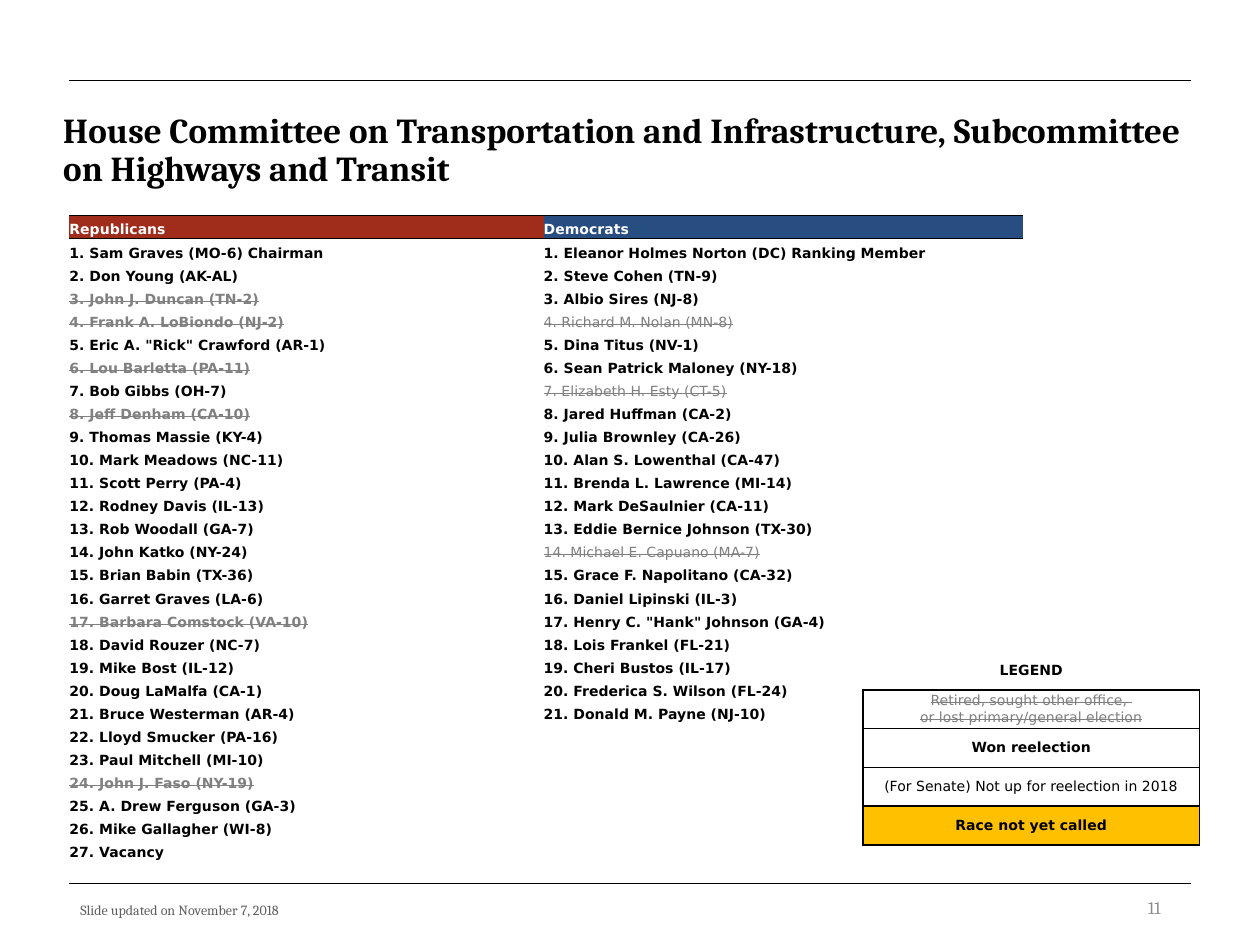
from dataclasses import dataclass
from itertools import zip_longest

from lxml import etree
from pptx import Presentation
from pptx.dml.color import RGBColor
from pptx.enum.shapes import MSO_CONNECTOR
from pptx.enum.text import MSO_ANCHOR, MSO_AUTO_SIZE, PP_ALIGN
from pptx.oxml.ns import qn
from pptx.util import Cm, Pt

LEFT, MID, RIGHT = PP_ALIGN.LEFT, PP_ALIGN.CENTER, PP_ALIGN.RIGHT
CENTRE, BOTTOM = MSO_ANCHOR.MIDDLE, MSO_ANCHOR.BOTTOM
NO_FIT = MSO_AUTO_SIZE.NONE
STRAIGHT = MSO_CONNECTOR.STRAIGHT
PLAIN = "{2D5ABB26-0587-4C30-8999-92F81FD0307C}"  # table style without grid


@dataclass(frozen=True)
class Theme:
    serif: str = "Cambria"
    sans: str = "DejaVu Sans"
    black: str = "000000"
    white: str = "FFFFFF"
    red: str = "A02C1C"
    blue: str = "284D81"
    gold: str = "FFC000"
    gone: str = "808080"
    faded: str = "7F7F7F"
    note: str = "5F5F5F"
    page: str = "8C8C8C"
    head: float = 20
    small: float = 8
    num: float = 10


T = Theme()


@dataclass(frozen=True)
class Look:
    color: str = T.black
    bold: bool = True
    strike: bool = False
    face: str = T.sans
    size: float = T.small
    align: PP_ALIGN = LEFT


@dataclass(frozen=True)
class Key:
    text: str
    look: Look
    fill: str = ""
    sides: str = "LRTB"


@dataclass(frozen=True)
class Party:
    name: str
    fill: str
    gone: Look
    members: list


# A leading "~" marks a member who is leaving
REPS = Party("Republicans", T.red, Look(T.gone, strike=True), [
    "Sam Graves (MO-6) Chairman", "Don Young (AK-AL)",
    "~John J. Duncan (TN-2)", "~Frank A. LoBiondo (NJ-2)",
    'Eric A. "Rick" Crawford (AR-1)', "~Lou Barletta (PA-11)",
    "Bob Gibbs (OH-7)", "~Jeff Denham (CA-10)", "Thomas Massie (KY-4)",
    "Mark Meadows (NC-11)", "Scott Perry (PA-4)", "Rodney Davis (IL-13)",
    "Rob Woodall (GA-7)", "John Katko (NY-24)", "Brian Babin (TX-36)",
    "Garret Graves (LA-6)", "~Barbara Comstock (VA-10)",
    "David Rouzer (NC-7)", "Mike Bost (IL-12)", "Doug LaMalfa (CA-1)",
    "Bruce Westerman (AR-4)", "Lloyd Smucker (PA-16)",
    "Paul Mitchell (MI-10)", "~John J. Faso (NY-19)",
    "A. Drew Ferguson (GA-3)", "Mike Gallagher (WI-8)", "Vacancy"])
DEMS = Party("Democrats", T.blue, Look(T.gone, bold=False, strike=True), [
    "Eleanor Holmes Norton (DC) Ranking Member", "Steve Cohen (TN-9)",
    "Albio Sires (NJ-8)", "~Richard M. Nolan (MN-8)", "Dina Titus (NV-1)",
    "Sean Patrick Maloney (NY-18)", "~Elizabeth H. Esty (CT-5)",
    "Jared Huffman (CA-2)", "Julia Brownley (CA-26)",
    "Alan S. Lowenthal (CA-47)", "Brenda L. Lawrence (MI-14)",
    "Mark DeSaulnier (CA-11)", "Eddie Bernice Johnson (TX-30)",
    "~Michael E. Capuano (MA-7)", "Grace F. Napolitano (CA-32)",
    "Daniel Lipinski (IL-3)", 'Henry C. "Hank" Johnson (GA-4)',
    "Lois Frankel (FL-21)", "Cheri Bustos (IL-17)",
    "Frederica S. Wilson (FL-24)", "Donald M. Payne (NJ-10)"])
KEYS = [
    Key("LEGEND", Look(align=MID), sides="B"),
    Key("Retired, sought other office, \nor lost primary/general election",
        Look(T.faded, bold=False, strike=True, align=MID)),
    Key("Won reelection", Look(align=MID)),
    Key("(For Senate) Not up for reelection in 2018",
        Look(bold=False, align=MID)),
    Key("Race not yet called", Look(align=MID), T.gold)]


def write(frame, text: str, look: Look) -> None:
    frame.text = text
    for para in frame.paragraphs:
        para.alignment = look.align
        font = para.font
        font.name, font.size, font.bold = look.face, Pt(look.size), look.bold
        font.color.rgb = RGBColor.from_string(look.color)
        if look.strike:
            base = para._p.pPr.find(qn("a:defRPr"))
            base.set("strike", "sngStrike")
        if not text:  # keeps an empty row low
            end = etree.SubElement(para._p, qn("a:endParaRPr"))
            end.set("sz", str(int(look.size * 100)))


def edge(cell, sides: str, width: float) -> None:
    props = cell._tc.get_or_add_tcPr()
    for spot, side in enumerate(sides):  # sides in schema order: L R T B
        line = etree.Element(qn(f"a:ln{side}"), w=str(Pt(width)))
        fill = etree.SubElement(line, qn("a:solidFill"))
        etree.SubElement(fill, qn("a:srgbClr"), val=T.black)
        props.insert(spot, line)


def paint(cell, fill: str) -> None:
    if fill:
        cell.fill.solid()
        cell.fill.fore_color.rgb = RGBColor.from_string(fill)
    else:
        cell.fill.background()


def grid(slide, rows: int, widths: list, x: Cm, y: Cm, high: Cm):
    frame = slide.shapes.add_table(rows, len(widths), x, y, sum(widths), high)
    table = frame.table
    table.first_row = table.horz_banding = False
    table._tbl.tblPr.find(qn("a:tableStyleId")).text = PLAIN
    for col, wide in zip(table.columns, widths):
        col.width = wide
    return table


def fill_cell(cell, text: str, look: Look, fill: str, anchor, pad) -> None:
    cell.margin_left = cell.margin_right = pad[0]
    cell.margin_top = cell.margin_bottom = pad[1]
    cell.vertical_anchor = anchor
    paint(cell, fill)
    write(cell.text_frame, text, look)


def rule(slide, y: Cm) -> None:
    line = slide.shapes.add_connector(STRAIGHT, Cm(1.4), y, Cm(24), y)
    line.line.color.rgb = RGBColor.from_string(T.black)
    line.line.width = Pt(0.5)
    etree.SubElement(line._element.spPr, qn("a:effectLst"))


def label(slide, text: str, look: Look, x, y, wide, high) -> None:
    frame = slide.shapes.add_textbox(x, y, wide, high).text_frame
    frame.word_wrap = True
    frame.vertical_anchor = CENTRE
    write(frame, text, look)


def legend(slide) -> None:
    table = grid(slide, len(KEYS), [Cm(6.78)], Cm(17.4), Cm(13.13), Cm(3.9))
    for row, key in enumerate(KEYS):
        cell = table.cell(row, 0)
        fill_cell(cell, key.text, key.look, key.fill, CENTRE,
                  (Cm(0.1), Cm(0.05)))
        edge(cell, key.sides, 1)


def roster(slide, teams: list) -> None:
    lists = list(zip_longest(*(t.members for t in teams), fillvalue=""))
    table = grid(slide, len(lists) + 1, [Cm(9.56), Cm(9.67)],
                 Cm(1.4), Cm(4.34), Cm(13.03))
    for col, team in enumerate(teams):
        head = table.cell(0, col)
        fill_cell(head, team.name, Look(T.white), team.fill, BOTTOM, (0, 0))
        edge(head, "TB", 0.5)
        for row, names in enumerate(lists, 1):
            name = names[col]
            look = team.gone if name.startswith("~") else Look()
            text = f"{row}. {name.lstrip('~')}" if name else ""
            fill_cell(table.cell(row, col), text, look, "", BOTTOM, (0, 0))


def main() -> None:
    deck = Presentation()
    deck.slide_width, deck.slide_height = Cm(25.4), Cm(19.05)
    slide = deck.slides.add_slide(deck.slide_layouts[5])

    # Frame lines and footer
    for y in (Cm(17.81), Cm(1.63)):
        rule(slide, y)
    label(slide, "Slide updated on November 7, 2018",
          Look(T.note, bold=False, face=T.serif),
          Cm(1.37), Cm(18.03), Cm(11.18), Cm(0.61))
    label(slide, "11",
          Look(T.page, bold=False, face=T.serif, size=T.num, align=RIGHT),
          Cm(17.93), Cm(17.93), Cm(5.72), Cm(0.74))

    # Title
    title = slide.shapes.title
    title.left, title.top = Cm(1.02), Cm(2.16)
    title.width, title.height = Cm(23.37), Cm(1.78)
    frame = title.text_frame
    frame.auto_size, frame.vertical_anchor = NO_FIT, CENTRE
    write(frame, "House Committee on Transportation and Infrastructure, "
          "Subcommittee on Highways and Transit",
          Look(face=T.serif, size=T.head))
    frame.paragraphs[0].line_spacing = 0.9

    # Tables
    legend(slide)
    roster(slide, [REPS, DEMS])
    deck.save("out.pptx")


if __name__ == "__main__":
    main()
